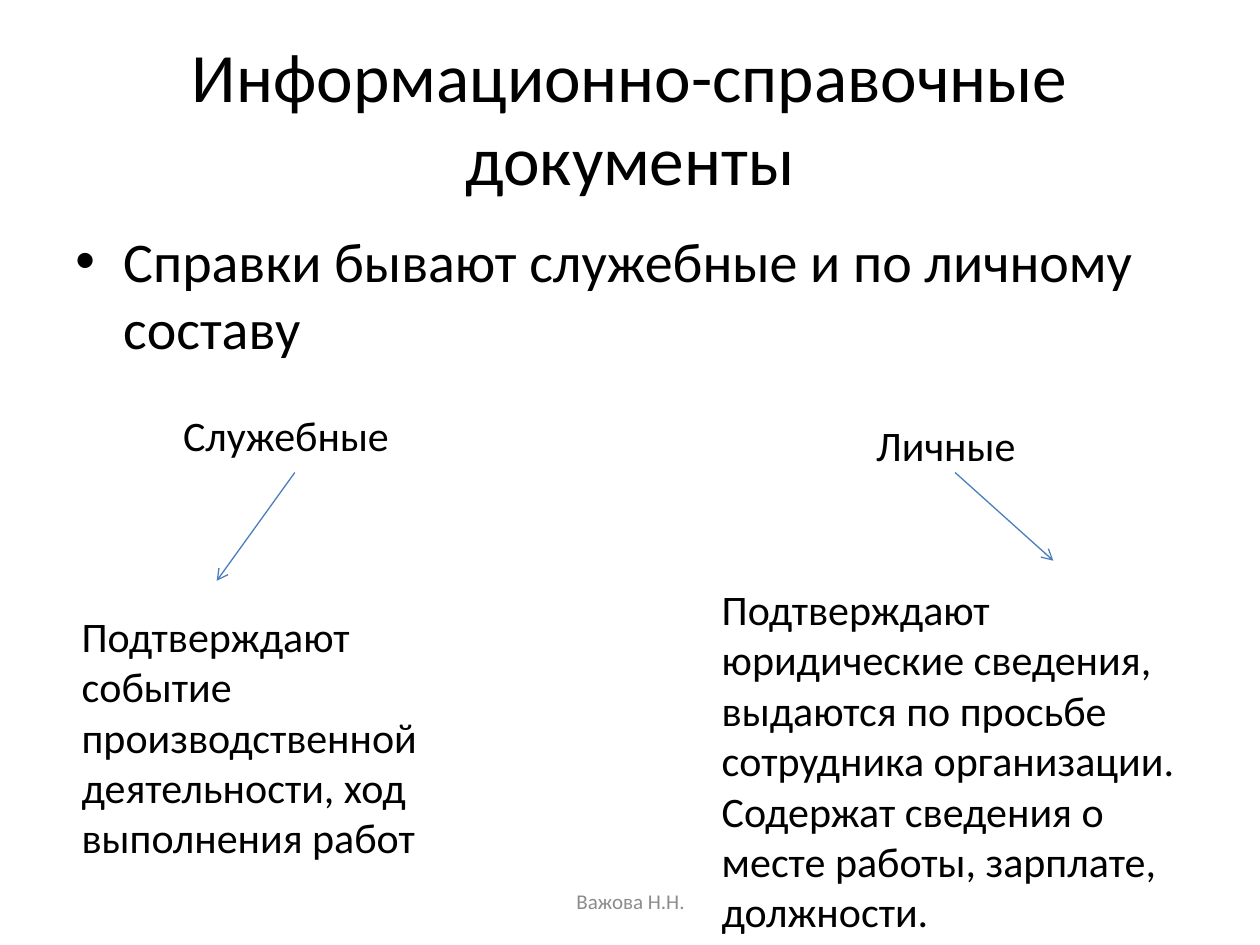
import pptx
import pptx.dml.color
import pptx.enum.shapes
import pptx.enum.text
import pptx.oxml
import pptx.oxml.ns
import pptx.util
from dataclasses import dataclass

ALIGN = pptx.enum.text.PP_ALIGN
ANCHOR = pptx.enum.text.MSO_ANCHOR


@dataclass(frozen=True)
class Theme:
    font: str = "Calibri"
    ink: str = "000000"
    muted: str = "8C8C8C"
    arrow: str = "4B7EBC"
    title: float = 39.6
    body: float = 32
    branch: float = 24
    footer: float = 12
    arrow_width: float = 0.75


class SlideBuilder:
    """Places elements on a grid of 100 columns by 75 rows."""

    COLUMNS, ROWS = 100, 75

    def __init__(self, deck, theme):
        self.deck, self.theme = deck, theme
        self.slide = deck.slides.add_slide(deck.slide_layouts[6])

    def x(self, columns):
        return round(self.deck.slide_width * columns / self.COLUMNS)

    def y(self, rows):
        return round(self.deck.slide_height * rows / self.ROWS)

    def box(self, left, top, width, height, anchor=ANCHOR.TOP):
        frame = self.slide.shapes.add_textbox(
            self.x(left), self.y(top), self.x(width), self.y(height)).text_frame
        frame.word_wrap = True
        frame.vertical_anchor = anchor
        return frame

    def add_text(self, paragraph, text, size, color=None, align=ALIGN.LEFT, before=0):
        paragraph.alignment = align
        paragraph.space_before = pptx.util.Pt(before)
        run = paragraph.add_run()
        run.text = text
        run.font.name = self.theme.font
        run.font.size = pptx.util.Pt(size)
        run.font.color.rgb = pptx.dml.color.RGBColor.from_string(color or self.theme.ink)

    def centered(self, area, text, size, color=None):
        frame = self.box(*area, anchor=ANCHOR.MIDDLE)
        self.add_text(frame.paragraphs[0], text, size, color, ALIGN.CENTER)

    def bullet(self, area, text):
        paragraph = self.box(*area).paragraphs[0]
        self.add_text(paragraph, text, self.theme.body, before=0.2 * self.theme.body)
        properties = paragraph._p.get_or_add_pPr()
        indent = pptx.util.Inches(0.38)
        properties.set("marL", str(indent))
        properties.set("indent", str(-indent))
        namespace = pptx.oxml.ns.nsdecls("a")
        for marker in ('buFont typeface="Arial"', 'buChar char="•"'):
            properties.append(pptx.oxml.parse_xml(f"<a:{marker} {namespace}/>"))

    def branch(self, area, heading, description, gap):
        frame = self.box(*area)
        frame.auto_size = pptx.enum.text.MSO_AUTO_SIZE.SHAPE_TO_FIT_TEXT
        self.add_text(frame.paragraphs[0], heading, self.theme.branch, align=ALIGN.CENTER)
        self.add_text(frame.add_paragraph(), description, self.theme.branch, before=gap)

    def arrow(self, start, end):
        connector = self.slide.shapes.add_connector(
            pptx.enum.shapes.MSO_CONNECTOR.STRAIGHT,
            self.x(start[0]), self.y(start[1]), self.x(end[0]), self.y(end[1]))
        connector.line.color.rgb = pptx.dml.color.RGBColor.from_string(self.theme.arrow)
        connector.line.width = pptx.util.Pt(self.theme.arrow_width)
        namespace = pptx.oxml.ns.nsdecls("a")
        connector.line._get_or_add_ln().append(
            pptx.oxml.parse_xml(f'<a:tailEnd {namespace} type="arrow"/>'))
        connector._element.spPr.append(
            pptx.oxml.parse_xml(f"<a:effectLst {namespace}/>"))


def main():
    deck = pptx.Presentation()
    deck.slide_width = pptx.util.Inches(10)
    deck.slide_height = pptx.util.Inches(7.5)
    theme = Theme()
    page = SlideBuilder(deck, theme)

    # Title and statement
    page.centered((5, 3, 90, 12.5), "Информационно-справочные документы", theme.title)
    page.bullet((5, 17.5, 90, 49.5), "Справки бывают служебные и по личному составу")

    # Two kinds of certificates
    page.branch((5.5, 32, 34.4, 37.4), "Служебные",
                "Подтверждают событие производственной деятельности, "
                "ход выполнения работ", gap=86)
    page.branch((56.3, 32.8, 38.3, 42.4), "Личные ",
                "Подтверждают юридические сведения, выдаются по просьбе "
                "сотрудника организации. Содержат сведения о месте работы, "
                "зарплате, должности.", gap=65)

    # Arrows from each kind to its description
    page.arrow((23.4, 37.5), (17.2, 46.1))
    page.arrow((75.8, 37.5), (83.6, 44.5))

    # Footer
    page.centered((34.2, 69.5, 31.7, 4), "Важова Н.Н.", theme.footer, theme.muted)

    deck.save("out.pptx")


if __name__ == "__main__":
    main()
